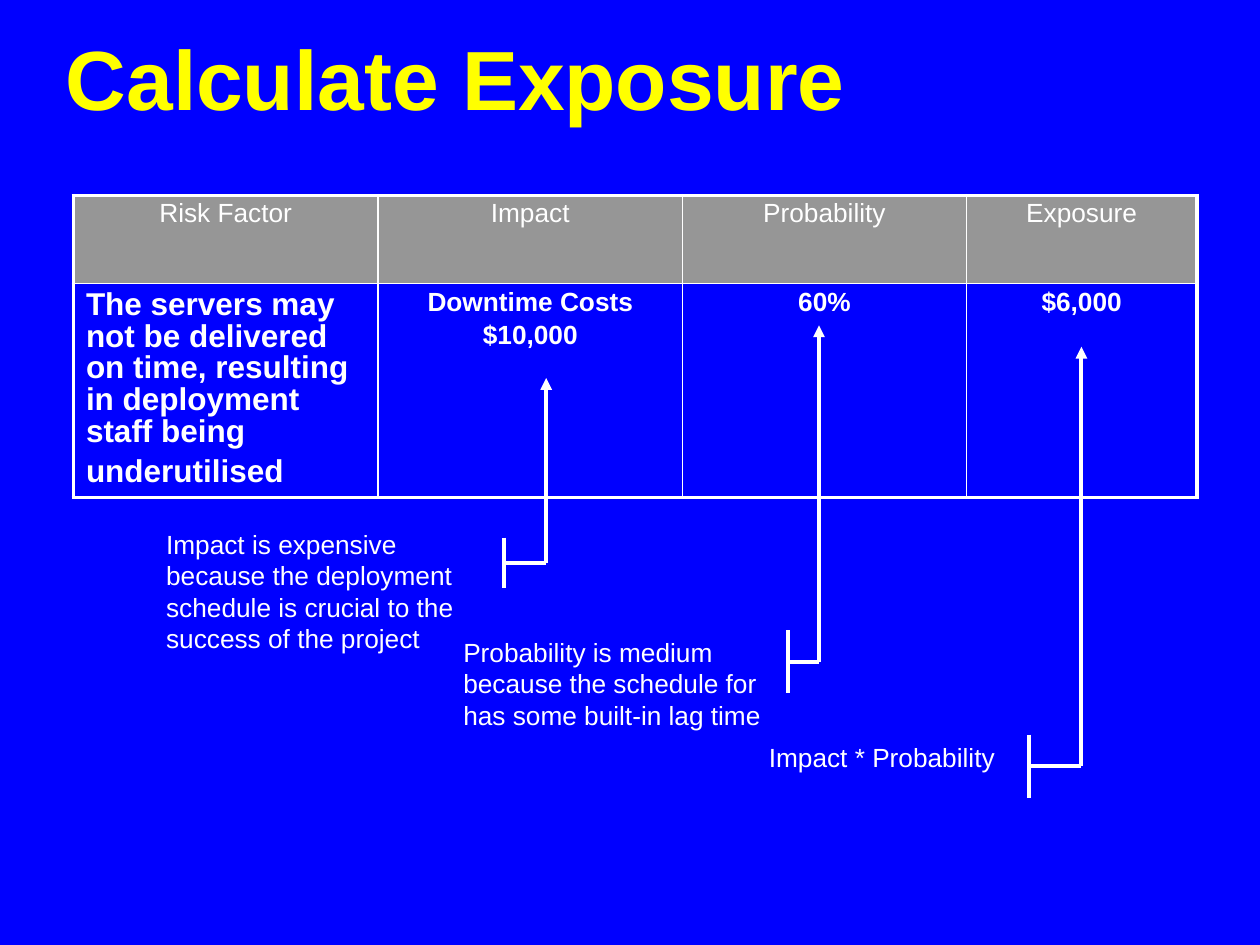
from lxml.etree import SubElement
from pptx import Presentation
from pptx.dml.color import RGBColor
from pptx.enum.shapes import MSO_CONNECTOR
from pptx.enum.text import MSO_ANCHOR, PP_ALIGN
from pptx.oxml.ns import qn
from pptx.util import Cm, Pt

BLUE = RGBColor(0x00, 0x00, 0xFF)
YELLOW = RGBColor(0xFF, 0xFF, 0x00)
WHITE = RGBColor(0xFF, 0xFF, 0xFF)
GREY = RGBColor(0x96, 0x96, 0x96)
FONT = "Arial"
BODY_SIZE = 15
THIN, THICK = 1, 2.25

TITLE = "Calculate Exposure"
HEADINGS = ["Risk Factor", "Impact", "Probability", "Exposure"]
RISK = [
    "The servers may not be delivered on time, resulting in deployment "
    "staff being underutilised",
    "Downtime Costs\n$10,000",
    "60%",
    "$6,000",
]
COLUMN_WIDTHS = [6.14, 6.14, 5.72, 4.65]
ROW_HEIGHTS = [1.78, 4.3]

NOTES = [
    ("Impact is expensive because the deployment schedule is crucial to the "
     "success of the project", (3.1, 10.52, 6.98, 2.8), PP_ALIGN.LEFT),
    ("Probability is medium because the schedule for has some built-in lag time",
     (9.09, 12.7, 6.56, 2.16), PP_ALIGN.LEFT),
    ("Impact * Probability", (15.03, 14.82, 5.5, 0.89), PP_ALIGN.CENTER),
]
# bracket x, arrow x, elbow y, arrow tip y, bracket half height
POINTERS = [
    (10.16, 11.01, 11.35, 7.62, 0.51),
    (15.88, 16.51, 13.34, 6.56, 0.64),
    (20.74, 21.8, 15.45, 6.99, 0.64),
]


def style_run(run, size, bold=False, color=WHITE):
    run.font.name = FONT
    run.font.size = Pt(size)
    run.font.bold = bold
    run.font.color.rgb = color


def set_borders(cell, widths):
    properties = cell._tc.get_or_add_tcPr()
    for side, width in zip("LRTB", widths):
        line = SubElement(properties, qn(f"a:ln{side}"), w=str(int(Pt(width))))
        fill = SubElement(line, qn("a:solidFill"))
        SubElement(fill, qn("a:srgbClr"), val=str(WHITE))


def add_title(slide):
    title = slide.shapes.title
    title.left, title.top, title.width, title.height = map(Cm, (1.07, 0.64, 23.8, 2.08))
    frame = title.text_frame
    frame.text = TITLE
    frame.vertical_anchor = MSO_ANCHOR.TOP
    heading = frame.paragraphs[0]
    heading.alignment = PP_ALIGN.LEFT
    heading.line_spacing = 0.9
    style_run(heading.runs[0], 48, True, YELLOW)


def add_risk_table(slide):
    rows = [HEADINGS, RISK]
    last_row, last_column = len(rows) - 1, len(HEADINGS) - 1
    table = slide.shapes.add_table(
        len(rows), len(HEADINGS), Cm(1.48), Cm(3.94),
        Cm(sum(COLUMN_WIDTHS)), Cm(sum(ROW_HEIGHTS))).table
    table.first_row = table.horz_banding = False
    for column, width in zip(table.columns, COLUMN_WIDTHS):
        column.width = Cm(width)
    for row, height in zip(table.rows, ROW_HEIGHTS):
        row.height = Cm(height)

    for r, texts in enumerate(rows):
        for c, text in enumerate(texts):
            cell = table.cell(r, c)
            outer = (c == 0, c == last_column, r == 0, r == last_row)
            set_borders(cell, [THICK if edge else THIN for edge in outer])
            if r == 0:
                cell.fill.solid()
                cell.fill.fore_color.rgb = GREY
            else:
                cell.fill.background()
            description = r == last_row and c == 0
            cell.text_frame.text = text
            for i, paragraph in enumerate(cell.text_frame.paragraphs):
                paragraph.alignment = PP_ALIGN.LEFT if description else PP_ALIGN.CENTER
                paragraph.line_spacing = 0.9
                paragraph.space_before = Pt(4 if i else 0)
                style_run(paragraph.runs[0], 18 if description else BODY_SIZE, r > 0)
            if description:
                ending = cell.text_frame.paragraphs[0].add_run()
                ending.text = " "
                style_run(ending, 24, True)


def add_note(slide, text, place, alignment):
    note = slide.shapes.add_textbox(*map(Cm, place))
    note.text_frame.word_wrap = True
    note.text_frame.text = text
    paragraph = note.text_frame.paragraphs[0]
    paragraph.alignment = alignment
    style_run(paragraph.runs[0], BODY_SIZE)


def add_line(group, start, end, arrow=False):
    line = group.shapes.add_connector(
        MSO_CONNECTOR.STRAIGHT, *map(Cm, start + end))
    line.line.color.rgb = WHITE
    line.line.width = Pt(THICK)
    if arrow:
        SubElement(line.line._get_or_add_ln(), qn("a:tailEnd"), type="triangle")
    SubElement(line._element.spPr, qn("a:effectLst"))


def add_pointer(slide, bracket_x, arrow_x, elbow_y, tip_y, half):
    group = slide.shapes.add_group_shape()
    add_line(group, (bracket_x, elbow_y), (arrow_x, elbow_y))
    add_line(group, (bracket_x, elbow_y - half), (bracket_x, elbow_y + half))
    add_line(group, (arrow_x, elbow_y), (arrow_x, tip_y), arrow=True)


def main():
    deck = Presentation()
    deck.slide_width, deck.slide_height = Cm(25.4), Cm(19.05)
    slide = deck.slides.add_slide(deck.slide_layouts.get_by_name("Title Only"))
    slide.background.fill.solid()
    slide.background.fill.fore_color.rgb = BLUE
    add_title(slide)
    add_risk_table(slide)
    for note in NOTES:
        add_note(slide, *note)
    for pointer in POINTERS:
        add_pointer(slide, *pointer)
    deck.save("out.pptx")


if __name__ == "__main__":
    main()
